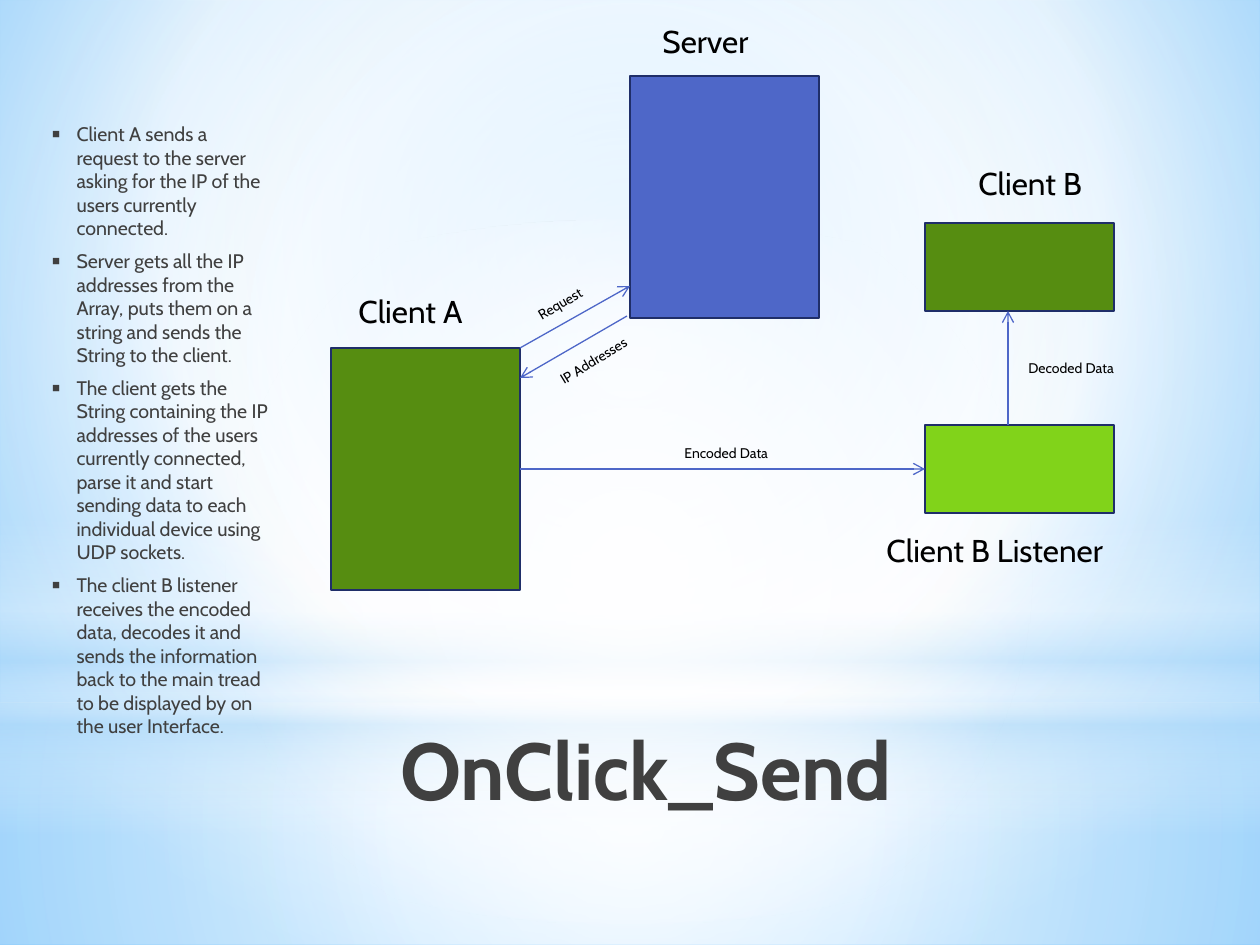
from collections import namedtuple

from lxml.etree import SubElement
from pptx import Presentation
from pptx.dml.color import RGBColor
from pptx.enum.shapes import MSO_CONNECTOR, MSO_SHAPE
from pptx.enum.text import MSO_ANCHOR, MSO_AUTO_SIZE, PP_ALIGN
from pptx.oxml.ns import qn
from pptx.util import Emu, Pt

Box = namedtuple("Box", "left top width height")

FONT = "Cabin"
WHITE = RGBColor(0xFF, 0xFF, 0xFF)
BLACK = RGBColor(0x00, 0x00, 0x00)
CHARCOAL = RGBColor(0x40, 0x40, 0x40)
SKY = RGBColor(0x9E, 0xD5, 0xFF)
AZURE = RGBColor(0x5B, 0xB9, 0xFF)
MIST = RGBColor(0xB4, 0xDC, 0xFA)
NAVY = RGBColor(0x1F, 0x2E, 0x69)
BLUE = RGBColor(0x4E, 0x67, 0xC8)
GREEN = RGBColor(0x56, 0x8D, 0x11)
LIME = RGBColor(0x81, 0xD3, 0x1A)

CENTER = (50, 50, 50, 50)
STEPS = (
    "Client A sends a request to the server asking for the IP of the users currently connected.",
    "Server gets all the IP addresses from the Array, puts them on a string and sends the String to the client.",
    "The client gets the String containing the IP addresses of the users currently connected, "
    "parse it and start sending data to each individual device using UDP sockets.",
    "The client B listener receives the encoded data, decodes it and sends the information "
    "back to the main tread to be displayed by on the user Interface.",
)


def px(length):
    return Emu(round(length * 914400 / 126))


def place(shape, box):
    shape.left, shape.top, shape.width, shape.height = map(px, box)


def set_gradient(properties, stops, focus=None):
    solid = properties.find(qn("a:solidFill"))
    gradient = SubElement(properties, qn("a:gradFill"), rotWithShape="1")
    properties.replace(solid, gradient)
    stop_list = SubElement(gradient, qn("a:gsLst"))
    for position, color, opacity in stops:
        stop = SubElement(stop_list, qn("a:gs"), pos=str(position * 1000))
        tint = SubElement(stop, qn("a:srgbClr"), val=str(color))
        if opacity < 100:
            SubElement(tint, qn("a:alpha"), val=str(opacity * 1000))
    if focus:
        circle = SubElement(gradient, qn("a:path"), path="circle")
        edges = {side: str(inset * 1000) for side, inset in zip("ltrb", focus)}
        SubElement(circle, qn("a:fillToRect"), **edges)
    else:
        SubElement(gradient, qn("a:lin"), ang="5400000", scaled="0")


def add_backdrop(page, box):
    page.background.fill.solid()
    set_gradient(page.element.find(".//" + qn("p:bgPr")),
                 ((0, SKY, 100), (60, WHITE, 100), (100, AZURE, 100)), (20, 10, 20, 60))
    layers = (
        (MSO_SHAPE.RECTANGLE, 703, 242,
         ((0, WHITE, 91), (37, WHITE, 76), (100, MIST, 79)), CENTER),
        (MSO_SHAPE.RECTANGLE, 0, 703,
         ((0, WHITE, 89), (48, WHITE, 62), (100, MIST, 79)), CENTER),
        (MSO_SHAPE.RECTANGLE, 519, 315,
         ((0, WHITE, 0), (29, WHITE, 30), (45, MIST, 40),
          (55, WHITE, 26), (65, MIST, 60), (100, WHITE, 0)), None),
        (MSO_SHAPE.OVAL, 220, 703, ((0, WHITE, 100), (56, WHITE, 0)), CENTER),
    )
    for depth, (preset, top, height, stops, focus) in enumerate(layers, start=2):
        area = Box(box.left, box.top + top, box.width, height)
        layer = page.shapes.add_shape(preset, *map(px, area))
        layer.shadow.inherit = False
        layer.line.fill.background()
        layer.fill.solid()
        set_gradient(layer.element.spPr, stops, focus)
        page.shapes.element.insert(depth, layer.element)


def style(para, size, color, bold=False):
    para.font.name = FONT
    para.font.size = Pt(size)
    para.font.bold = bold
    para.font.color.rgb = color


def fill_title(page, box):
    title = page.shapes.title
    place(title, box)
    frame = title.text_frame
    frame.text = "OnClick_Send"
    frame.vertical_anchor = MSO_ANCHOR.TOP
    frame.auto_size = MSO_AUTO_SIZE.NONE
    para = frame.paragraphs[0]
    para.alignment = PP_ALIGN.CENTER
    style(para, 46, CHARCOAL, bold=True)


def fill_steps(page, box):
    body = page.placeholders[1]
    place(body, box)
    frame = body.text_frame
    frame.text = "\n".join(STEPS)
    frame.vertical_anchor = MSO_ANCHOR.TOP
    frame.auto_size = MSO_AUTO_SIZE.NONE
    for para in frame.paragraphs:
        style(para, 11.2, CHARCOAL)
        para.space_before = Pt(2.24)
        para.space_after = Pt(3)
        properties = para._p.get_or_add_pPr()
        properties.set("marL", str(px(31)))
        properties.set("indent", str(px(-25)))
        SubElement(properties, qn("a:buSzPct"), val="130000")
        SubElement(properties, qn("a:buFont"), typeface="Arial")
        SubElement(properties, qn("a:buChar"), char="▪")


def add_node(page, box, color):
    node = page.shapes.add_shape(MSO_SHAPE.RECTANGLE, *map(px, box))
    node.shadow.inherit = False
    node.fill.solid()
    node.fill.fore_color.rgb = color
    node.line.color.rgb = NAVY
    node.line.width = Pt(1.25)


def add_label(page, box, text, size, rotation=0):
    label = page.shapes.add_textbox(*map(px, box))
    label.rotation = rotation
    label.text_frame.word_wrap = True
    label.text_frame.text = text
    style(label.text_frame.paragraphs[0], size, BLACK)


def add_arrow(page, *ends):
    arrow = page.shapes.add_connector(MSO_CONNECTOR.STRAIGHT, *map(px, ends))
    arrow.line.color.rgb = BLUE
    arrow.line.width = Pt(0.75)
    SubElement(arrow.line._get_or_add_ln(), qn("a:tailEnd"), type="arrow")
    SubElement(arrow.element.spPr, qn("a:effectLst"))


def add_diagram(page, box):
    left, top = box.left, box.top
    nodes = (
        (594, 207, 88, GREEN, "Client B", 635, 142, 140),
        (0, 332, 242, GREEN, "Client A", 15, 270, 168),
        (299, 60, 242, BLUE, "Server", 319, 0, 168),
        (594, 409, 88, LIME, "Client B Listener", 543, 509, 268),
    )
    for x, y, height, color, name, name_x, name_y, name_width in nodes:
        add_node(page, Box(left + x, top + y, 189, height), color)
        add_label(page, Box(left + name_x, top + name_y, name_width, 50), name, 18)

    messages = (
        (189, 332, 299, 270, "Request", 192, 271, 81, 329.3),
        (296, 300, 189, 362, "IP Addresses", 212, 328, 107, 328.6),
        (189, 453, 594, 453, "Encoded Data", 341, 422, 126, 0),
        (677, 409, 677, 295, "Decoded Data", 685, 337, 126, 0),
    )
    for start_x, start_y, end_x, end_y, text, x, y, width, rotation in messages:
        add_arrow(page, left + start_x, top + start_y, left + end_x, top + end_y)
        add_label(page, Box(left + x, top + y, width, 30), text, 8, rotation)


def main():
    deck = Presentation()
    deck.slide_width, deck.slide_height = px(1260), px(945)
    page = deck.slides.add_slide(deck.slide_layouts[1])
    add_backdrop(page, Box(0, 0, 1260, 945))
    fill_steps(page, Box(33, 116, 252, 557))
    fill_title(page, Box(282, 714, 728, 158))
    add_diagram(page, Box(331, 16, 811, 574))
    deck.save("out.pptx")


if __name__ == "__main__":
    main()
